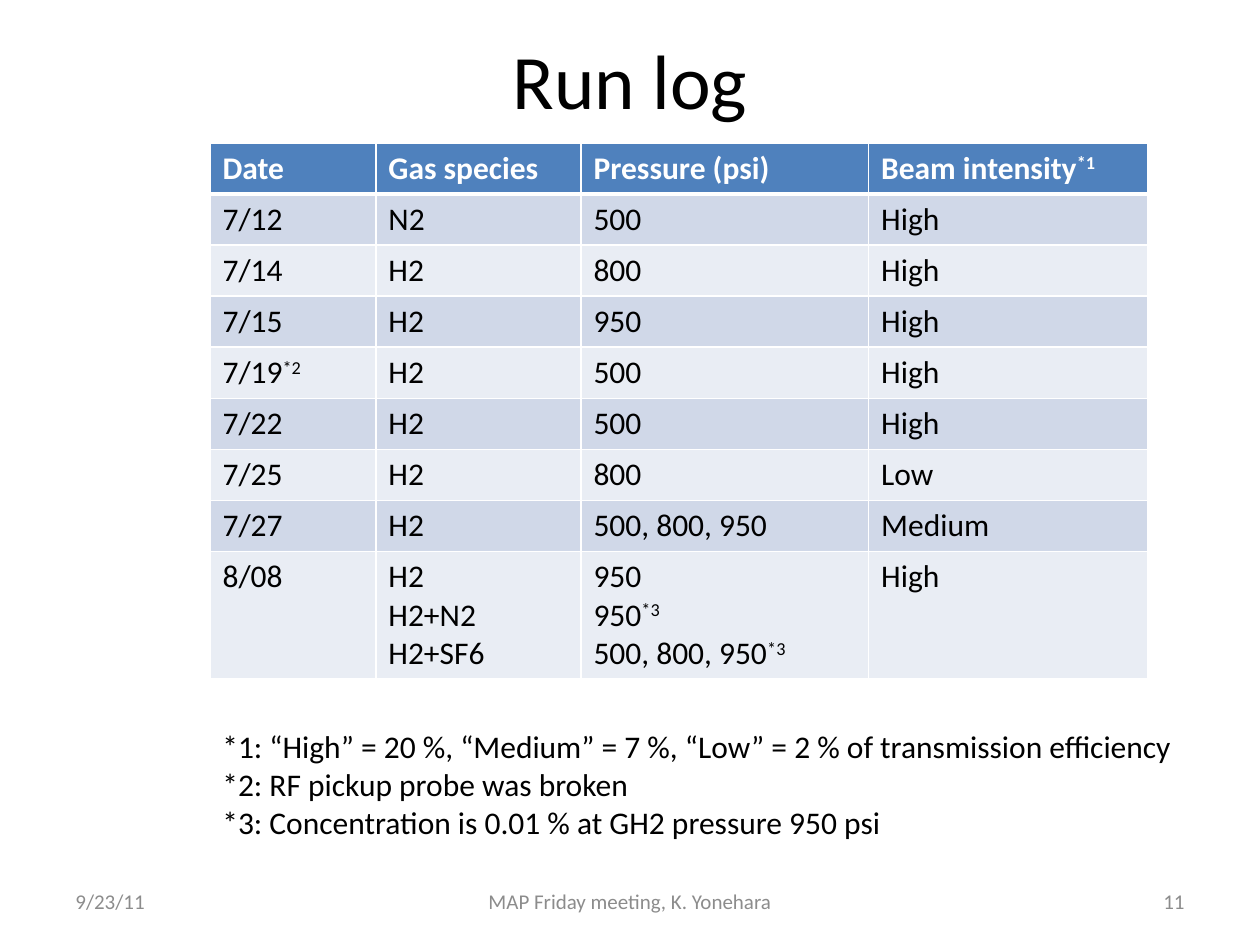
"""Build the run log slide: beam test table with footnotes and footer."""
from lxml import etree
from pptx import Presentation
from pptx.dml.color import RGBColor
from pptx.enum import text
from pptx.oxml import ns
from pptx.util import Pt

BLACK = RGBColor(0x00, 0x00, 0x00)
WHITE = RGBColor(0xFF, 0xFF, 0xFF)
GREY = RGBColor(0x8C, 0x8C, 0x8C)
HEADER_BLUE = RGBColor(0x4F, 0x81, 0xBD)
BANDS = [RGBColor(0xD0, 0xD8, 0xE8), RGBColor(0xE9, 0xED, 0xF4)]
LEFT, CENTER, RIGHT = text.PP_ALIGN.LEFT, text.PP_ALIGN.CENTER, text.PP_ALIGN.RIGHT


def write(frame, lines, size, color, align=LEFT, bold=False):
    for index, line in enumerate(lines.split("\n")):
        paragraph = frame.paragraphs[0] if index == 0 else frame.add_paragraph()
        paragraph.alignment = align
        for part, words in enumerate(line.split("^")):
            run = paragraph.add_run()
            run.text = words
            run.font.name = "Calibri"
            run.font.size = Pt(size)
            run.font.bold = bold
            run.font.color.rgb = color
            if part:
                run._r.get_or_add_rPr().set("baseline", "30000")


def add_border(cell, side, width):
    properties = cell._tc.get_or_add_tcPr()
    line = etree.SubElement(properties, ns.qn(f"a:ln{side}"), w=str(Pt(width)))
    fill = etree.SubElement(line, ns.qn("a:solidFill"))
    etree.SubElement(fill, ns.qn("a:srgbClr"), val=str(WHITE))


prs = Presentation()
prs.slide_width, prs.slide_height = Pt(720), Pt(540)
slide = prs.slides.add_slide(prs.slide_layouts[6])

for words, left, top, width, height, size, color, align in [
    ("Run log", 36, 0, 648, 90, 44, BLACK, CENTER),
    ("9/23/11", 36, 500.5, 168, 28.75, 12, GREY, LEFT),
    ("11", 516, 500.5, 168, 28.75, 12, GREY, RIGHT),
    ("MAP Friday meeting, K. Yonehara", 246, 500.5, 228, 28.75, 12, GREY, CENTER),
]:
    frame = slide.shapes.add_textbox(Pt(left), Pt(top), Pt(width), Pt(height)).text_frame
    frame.word_wrap = True
    frame.vertical_anchor = text.MSO_ANCHOR.MIDDLE
    write(frame, words, size, color, align)

runs = [
    ("Date", "Gas species", "Pressure (psi)", "Beam intensity^*1"),
    ("7/12", "N2", "500", "High"),
    ("7/14", "H2", "800", "High"),
    ("7/15", "H2", "950", "High"),
    ("7/19^*2", "H2", "500", "High"),
    ("7/22", "H2", "500", "High"),
    ("7/25", "H2", "800", "Low"),
    ("7/27", "H2", "500, 800, 950", "Medium"),
    ("8/08", "H2\nH2+N2\nH2+SF6", "950\n950^*3\n500, 800, 950^*3", "High"),
]
column_widths = [94.8, 117.2, 164.4, 159.6]
row_heights = [29.2] * 8 + [72.8]
run_log = slide.shapes.add_table(
    len(runs), len(column_widths), Pt(120), Pt(81.6),
    Pt(sum(column_widths)), Pt(sum(row_heights))).table
run_log.horz_banding = False
for column, width in zip(run_log.columns, column_widths):
    column.width = Pt(width)
for row, height in zip(run_log.rows, row_heights):
    row.height = Pt(height)

for r, entries in enumerate(runs):
    header = r == 0
    for c, entry in enumerate(entries):
        cell = run_log.cell(r, c)
        for side in "LRTB":
            heavy = (header and side == "B") or (r == 1 and side == "T")
            add_border(cell, side, 3 if heavy else 1)
        cell.fill.solid()
        cell.fill.fore_color.rgb = HEADER_BLUE if header else BANDS[(r - 1) % 2]
        write(cell.text_frame, entry, 18, WHITE if header else BLACK, bold=header)

footnotes = slide.shapes.add_textbox(Pt(120), Pt(412), Pt(562.4), Pt(72.7)).text_frame
footnotes.word_wrap = False
footnotes.auto_size = text.MSO_AUTO_SIZE.SHAPE_TO_FIT_TEXT
write(
    footnotes,
    "*1: “High” = 20 %, “Medium” = 7 %, “Low” = 2 % of transmission efficiency\n"
    "*2: RF pickup probe was broken\n"
    "*3: Concentration is 0.01 % at GH2 pressure 950 psi",
    18, BLACK)

prs.save("out.pptx")
